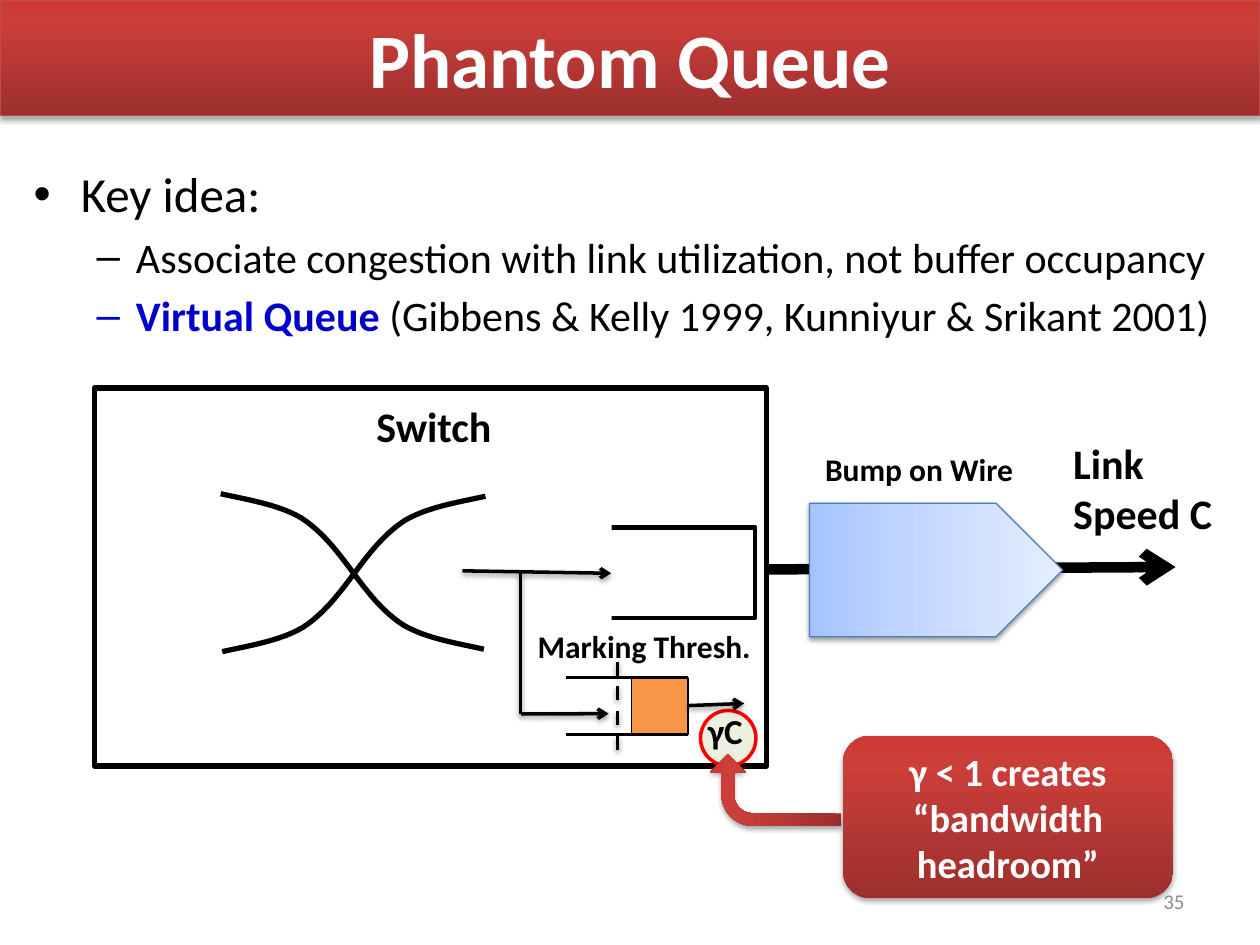
from lxml import etree
from pptx import Presentation
from pptx.dml.color import RGBColor
from pptx.enum.dml import MSO_LINE
from pptx.enum.shapes import MSO_CONNECTOR, MSO_SHAPE
from pptx.enum.text import MSO_ANCHOR, MSO_AUTO_SIZE, PP_ALIGN
from pptx.oxml.ns import qn
from pptx.util import Pt

LEFT, MID, RIGHT = PP_ALIGN.LEFT, PP_ALIGN.CENTER, PP_ALIGN.RIGHT
TOP, CENTER = MSO_ANCHOR.TOP, MSO_ANCHOR.MIDDLE
FIXED = MSO_AUTO_SIZE.NONE
RECT, OVAL = MSO_SHAPE.RECTANGLE, MSO_SHAPE.OVAL
ROUND, BENT = MSO_SHAPE.ROUNDED_RECTANGLE, MSO_SHAPE.BENT_ARROW
SNIP = MSO_SHAPE.SNIP_2_SAME_RECTANGLE
STRAIGHT, DASH = MSO_CONNECTOR.STRAIGHT, MSO_LINE.DASH

FONT = "Calibri"
BLACK, WHITE = "000000", "FFFFFF"
REDS = [(0, "9C2F2D"), (80, "CB3E3A"), (100, "CE3B37")]
BLUES = [(0, "A4C4FF"), (35, "BFD4FF"), (100, "E6EEFF")]
DEEP = (35, 1.8)
SOFT = (38, 1.6)
ARM = [(75.2, -44.4), (58.6, -40.8), (41.4, -37.9), (29.2, -30.6),
       (17, -22.7), (8.4, -11.2), (0, 0)]


def tint(code):
    return RGBColor.from_string(code)


def node(parent, tag, **attrs):
    return etree.SubElement(parent, qn(tag), {k: str(v) for k, v in attrs.items()})


def shade(effects, cast):
    alpha, gap = cast
    drop = node(effects, "a:outerShdw", blurRad=Pt(3.1), dist=Pt(gap),
                dir=5400000, rotWithShape=0)
    node(node(drop, "a:srgbClr", val=BLACK), "a:alpha", val=alpha * 1000)


def blend(shape, stops):
    shape.fill.gradient()
    shape.fill.gradient_angle = 90
    items = shape._element.spPr.find(".//" + qn("a:gsLst"))
    for old in list(items):
        items.remove(old)
    for place, code in stops:
        node(node(items, "a:gs", pos=place * 1000), "a:srgbClr", val=code)


def style(shape, fill=None, line=None, width=0.75, cast=None):
    if fill is None:
        shape.fill.background()
    elif isinstance(fill, list):
        blend(shape, fill)
    else:
        shape.fill.solid()
        shape.fill.fore_color.rgb = tint(fill)
    if line:
        shape.line.color.rgb = tint(line)
        shape.line.width = Pt(width)
    else:
        shape.line.fill.background()
    shape.shadow.inherit = False
    if cast:
        shade(shape._element.spPr.find(qn("a:effectLst")), cast)


def block(slide, kind, box, turn=0, adjust=(), **look):
    shape = slide.shapes.add_shape(kind, *map(Pt, box))
    shape.rotation = turn
    for i, value in enumerate(adjust):
        shape.adjustments[i] = value
    style(shape, **look)
    return shape


def wire(slide, start, end, width=2, arrow=False, dash=False, cast=None):
    link = slide.shapes.add_connector(STRAIGHT, *map(Pt, start + end))
    link.line.color.rgb = tint(BLACK)
    link.line.width = Pt(width)
    if dash:
        link.line.dash_style = DASH
    props = link._element.spPr
    if arrow:
        node(props.find(qn("a:ln")), "a:tailEnd", type="arrow")
    effects = node(props, "a:effectLst")
    if cast:
        shade(effects, cast)


def bezier(ends, steps=12):
    for i in range(1, steps + 1):
        t = i / steps
        u = 1 - t
        parts = (u ** 3, 3 * u * u * t, 3 * u * t * t, t ** 3)
        yield tuple(sum(w * p[k] for w, p in zip(parts, ends)) for k in (0, 1))


def curve(slide, hub, flip, rise):
    dots = [ARM[0], *bezier(ARM[:4]), *bezier(ARM[3:])]
    dots = [(Pt(hub[0] + flip * x), Pt(hub[1] + rise * y)) for x, y in dots]
    path = slide.shapes.build_freeform(*dots[0])
    path.add_line_segments(dots[1:], close=False)
    style(path.convert_to_shape(), line=BLACK, width=3)


def write(para, text, size, color=BLACK, bold=False):
    run = para.add_run()
    run.text = text
    run.font.name = FONT
    run.font.size = Pt(size)
    run.font.bold = bold
    run.font.color.rgb = tint(color)


def fill_in(shape, text, align=LEFT, anchor=TOP, **look):
    frame = shape.text_frame
    frame.word_wrap = True
    frame.auto_size = FIXED
    frame.vertical_anchor = anchor
    for i, row in enumerate(text.split("\n")):
        para = frame.add_paragraph() if i else frame.paragraphs[0]
        para.alignment = align
        write(para, row, **look)


def label(slide, text, box, **look):
    fill_in(slide.shapes.add_textbox(*map(Pt, box)), text, **look)


def place(shape, box):
    shape.left, shape.top, shape.width, shape.height = map(Pt, box)


def header(slide):
    box = (0, 0, 720, 66)
    banner = block(slide, RECT, box, fill=REDS, line="BF4C48", cast=DEEP)
    slide.shapes._spTree.insert(2, banner._element)
    title = slide.shapes.title
    place(title, box)
    fill_in(title, "Phantom Queue", align=MID, anchor=CENTER,
            size=44, color=WHITE, bold=True)


def bullets(slide):
    body = slide.placeholders[1]
    place(body, (12, 90, 702, 392.4))
    frame = body.text_frame
    frame.auto_size = FIXED
    write(frame.paragraphs[0], "Key idea:", 28)
    rows = [
        [("Associate congestion with link utilization, not buffer occupancy", {})],
        [("Virtual Queue ", {"color": "0000CC", "bold": True}),
         ("(Gibbens & Kelly 1999, Kunniyur & Srikant 2001)", {})],
    ]
    for row in rows:
        para = frame.add_paragraph()
        para.level = 1
        for text, look in row:
            write(para, text, 24, **look)


def switch(slide):
    wire(slide, (437.8, 325.4), (671.8, 324), width=6, arrow=True)
    block(slide, SNIP, (496.8, 253.4, 76.3, 144.7), turn=90, adjust=(0.5, 0),
          fill=BLUES, line="4B7EBC", cast=SOFT)
    block(slide, RECT, (54, 221.8, 384, 216), line=BLACK, width=3)
    for hub, rise in (((201.3, 326.6), 1), ((202.2, 328), -1)):
        curve(slide, hub, -1, rise)
        curve(slide, hub, 1, -rise)
    block(slide, RECT, (362.9, 284.4, 51.8, 85.7), turn=270, line=BLACK, width=2.5)
    block(slide, RECT, (303.1, 312.5, 61.9, 31), turn=270, fill=WHITE)
    wire(slide, (264.2, 326.2), (349.2, 327.6), arrow=True, cast=SOFT)
    wire(slide, (297.4, 407.8), (297.4, 327.6), cast=SOFT)
    wire(slide, (297.8, 408), (347.8, 407.8), arrow=True, cast=SOFT)


def phantom(slide):
    block(slide, OVAL, (400.3, 406, 31.7, 31.7), fill="EBF1DE", line="FF0000", width=2)
    block(slide, RECT, (360.7, 387.4, 32.4, 32.4), fill="F79646", line=BLACK)
    for y in (387.2, 419.6):
        wire(slide, (323.3, y), (393.1, y))
    wire(slide, (393.1, 403.2), (425.3, 402), arrow=True, cast=SOFT)
    wire(slide, (352.8, 428.4), (352.8, 375.1), dash=True, cast=SOFT)


def labels(slide):
    for text, box, size in (
        ("Link\nSpeed C", (606.2, 246.2, 102.2, 65.5), 24),
        ("Switch", (208, 225.4, 175.7, 62.6), 24),
        ("Bump on Wire", (464.4, 253.4, 129.6, 30.2), 18),
        ("Marking Thresh.", (300.2, 355, 156.2, 28.8), 18),
        ("γC", (397.4, 401.8, 36, 31.7), 20),
    ):
        label(slide, text, box, size=size, bold=True)
    label(slide, "35", (516.2, 500.4, 167.8, 28.8), align=RIGHT, anchor=CENTER,
          size=12, color="8C8C8C")


def callout(slide):
    block(slide, BENT, (422.6, 414, 41, 74.9), turn=270,
          adjust=(0.176, 0.25, 0.25, 0.438), fill=REDS, cast=DEEP)
    note = block(slide, ROUND, (481.7, 420.5, 188.6, 92.9), fill=REDS, cast=DEEP)
    fill_in(note, "γ < 1 creates\n“bandwidth headroom”", align=MID, anchor=CENTER,
            size=22, color=WHITE, bold=True)


def main():
    deck = Presentation()
    deck.slide_width, deck.slide_height = Pt(720), Pt(540)
    slide = deck.slides.add_slide(deck.slide_layouts[1])
    for part in (header, bullets, switch, phantom, labels, callout):
        part(slide)
    deck.save("out.pptx")


if __name__ == "__main__":
    main()
